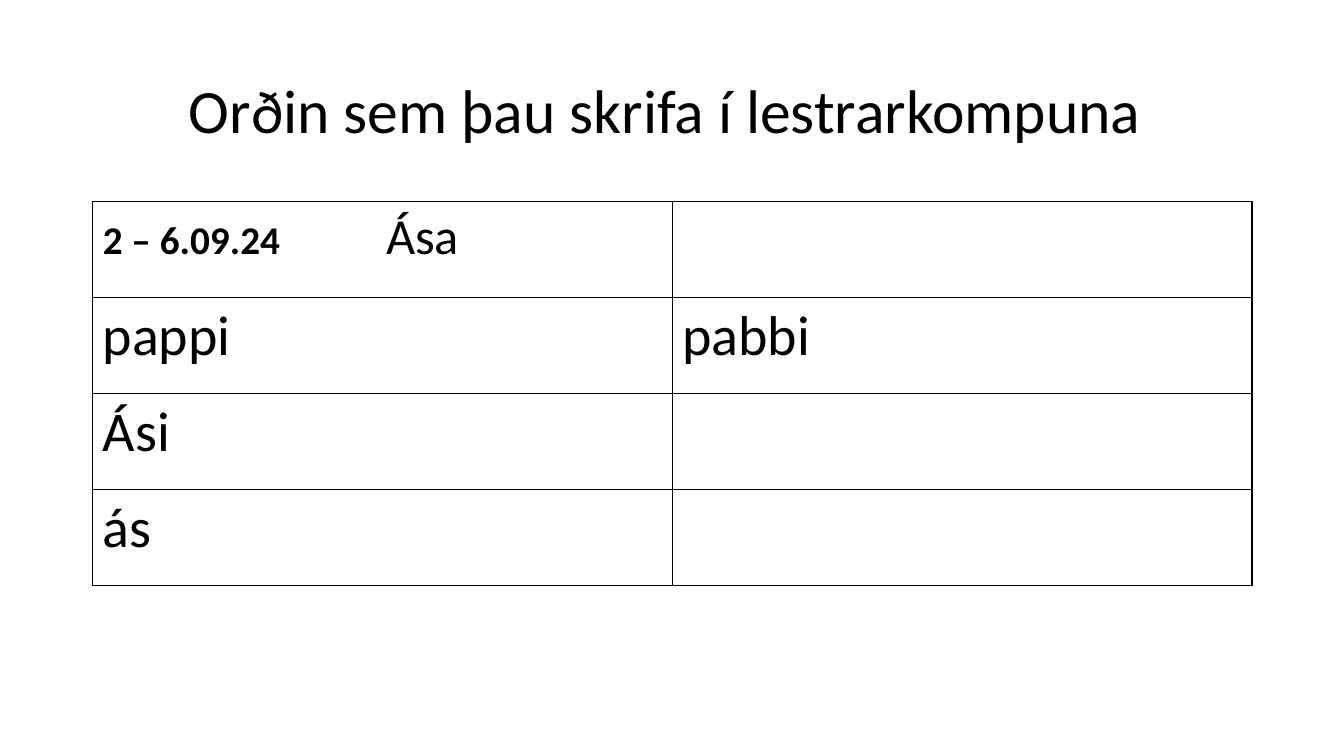
from dataclasses import dataclass
from typing import NamedTuple

import pptx
import pptx.dml.color
import pptx.enum.text
import pptx.oxml
import pptx.oxml.ns
import pptx.util
from lxml import etree

SLIDE_W = pptx.util.Inches(13.333)
SLIDE_H = pptx.util.Inches(7.5)


@dataclass(frozen=True)
class Theme:
    font: str = "Calibri"
    ink: str = "000000"
    title_size: int = 44
    date_size: int = 28
    name_size: int = 36
    word_size: int = 40
    border_width: float = 1


class Box(NamedTuple):
    """Position and size in inches."""
    left: float
    top: float
    width: float
    height: float

    def emu(self) -> list[int]:
        return [pptx.util.Inches(v) for v in self]


class Piece(NamedTuple):
    text: str
    size: int
    bold: bool = False


THEME = Theme()
TITLE_BOX = Box(0.92, 0.4, 11.5, 1.45)
TABLE_BOX = Box(0.92, 2, 11.5, 3.81)
NAME_TAB = 2.81

TITLE = "Orðin sem þau skrifa í lestrarkompuna "
HEADING = [Piece("2 – 6.09.24\t", THEME.date_size, True), Piece("Ása", THEME.name_size)]
WORDS = [("pappi", "pabbi"), ("Ási", ""), ("ás", "")]


def style_font(font, size: int, bold: bool = False) -> None:
    font.name = THEME.font
    font.size = pptx.util.Pt(size)
    font.bold = bold
    font.color.rgb = pptx.dml.color.RGBColor.from_string(THEME.ink)


def add_title(s) -> None:
    sp = s.shapes.title
    sp.left, sp.top, sp.width, sp.height = TITLE_BOX.emu()
    tf = sp.text_frame
    tf.text = TITLE
    tf.word_wrap = True
    tf.vertical_anchor = pptx.enum.text.MSO_ANCHOR.MIDDLE
    p = tf.paragraphs[0]
    p.alignment = pptx.enum.text.PP_ALIGN.CENTER
    p.line_spacing = 0.9
    style_font(p.runs[0].font, THEME.title_size)


def add_borders(cell) -> None:
    """Draw all four borders, ahead of the fill as the schema asks."""
    tc_pr = cell._tc.get_or_add_tcPr()
    for i, side in enumerate("LRTB"):
        ln = etree.Element(pptx.oxml.ns.qn(f"a:ln{side}"),
                           w=str(pptx.util.Pt(THEME.border_width)))
        fill = etree.SubElement(ln, pptx.oxml.ns.qn("a:solidFill"))
        etree.SubElement(fill, pptx.oxml.ns.qn("a:srgbClr"), val=THEME.ink)
        tc_pr.insert(i, ln)


def write_cell(cell, pieces: list[Piece]) -> None:
    p = cell.text_frame.paragraphs[0]
    style_font(p.font, THEME.word_size)
    for piece in pieces:
        r = p.add_run()
        r.text = piece.text
        style_font(r.font, piece.size, piece.bold)
    cell.fill.background()
    add_borders(cell)


def add_tab_stop(p, inches: float) -> None:
    tabs = etree.Element(pptx.oxml.ns.qn("a:tabLst"))
    etree.SubElement(tabs, pptx.oxml.ns.qn("a:tab"),
                     pos=str(pptx.util.Inches(inches)), algn="l")
    p._p.get_or_add_pPr().insert(0, tabs)


def add_word_table(s) -> None:
    rows = [[HEADING, []]]
    rows += [[[Piece(word, THEME.word_size)] if word else [] for word in pair]
             for pair in WORDS]
    table = s.shapes.add_table(len(rows), len(rows[0]), *TABLE_BOX.emu()).table
    table.first_row = table.horz_banding = False
    for i, row in enumerate(rows):
        for j, pieces in enumerate(row):
            write_cell(table.cell(i, j), pieces)
    add_tab_stop(table.cell(0, 0).text_frame.paragraphs[0], NAME_TAB)


def main() -> None:
    prs = pptx.Presentation()
    prs.slide_width, prs.slide_height = SLIDE_W, SLIDE_H
    s = prs.slides.add_slide(prs.slide_layouts.get_by_name("Title Only"))
    add_title(s)
    add_word_table(s)
    prs.save("out.pptx")


if __name__ == "__main__":
    main()
